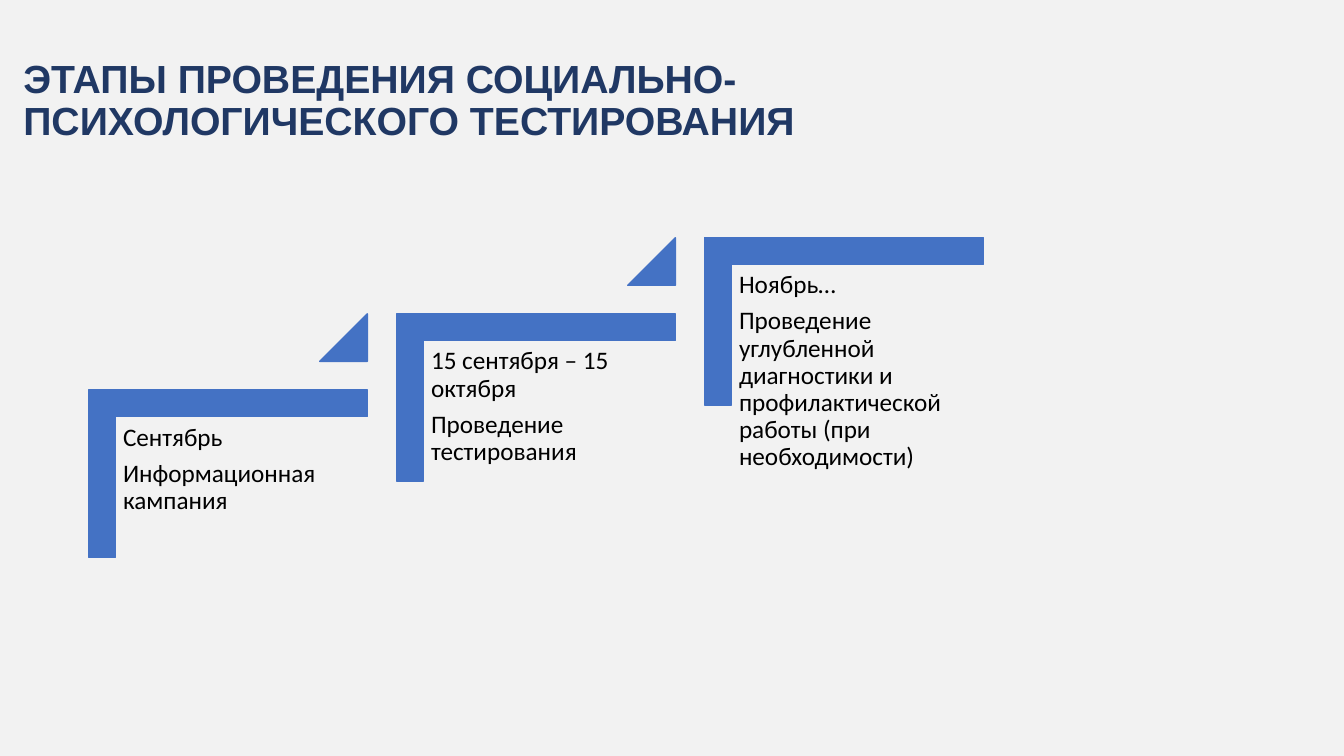
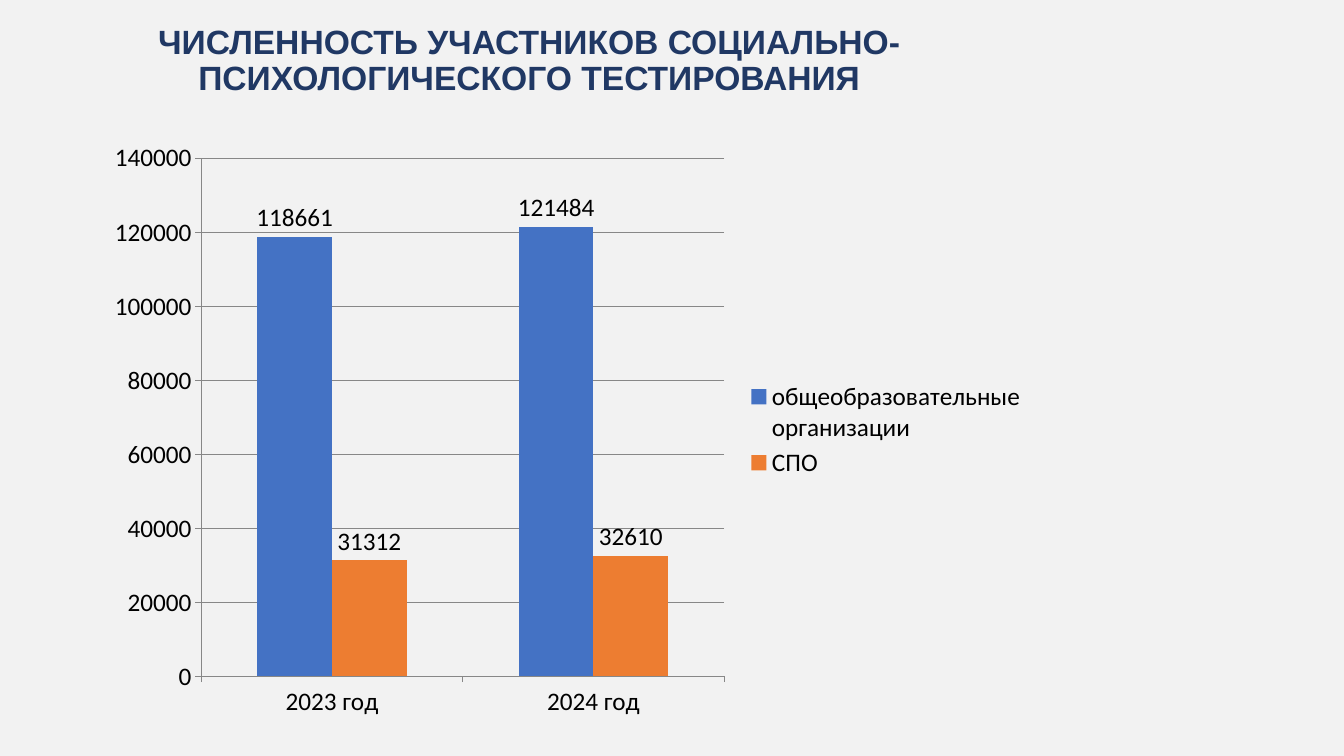
from pptx import Presentation
from pptx.chart.data import CategoryChartData
from pptx.dml.color import RGBColor
from pptx.enum.chart import XL_CHART_TYPE, XL_LABEL_POSITION, XL_LEGEND_POSITION, XL_TICK_MARK
from pptx.enum.shapes import MSO_SHAPE as SHAPE
from pptx.enum.text import MSO_ANCHOR as ANCHOR, MSO_AUTO_SIZE, PP_ALIGN as ALIGN
from pptx.util import Pt


def rgb(value):
    return RGBColor.from_string(value)


class Deck:
    """Shared style and the current slide; lengths are in points."""
    BACK, NAVY, BLUE, ORANGE = "F2F2F2", "203864", "4472C4", "ED7D31"
    BLACK, GRID = "000000", "878787"
    HEAD_FONT, BODY_FONT, BODY_SIZE = "Arial", "Calibri", 18

    def __init__(self):
        self.prs = Presentation()
        self.prs.slide_width, self.prs.slide_height = Pt(960), Pt(540)
        self.slide = None

    def font(self, font, name, size, color, bold=False):
        font.name, font.size, font.bold = name, Pt(size), bold
        font.color.rgb = rgb(color)

    # Slide with background and title
    def new_slide(self, title, box, size, align, anchor):
        self.slide = self.prs.slides.add_slide(self.prs.slide_layouts[5])
        fill = self.slide.background.fill
        fill.solid()
        fill.fore_color.rgb = rgb(self.BACK)
        sp = self.slide.shapes.title
        sp.left, sp.top, sp.width, sp.height = map(Pt, box)
        tf = sp.text_frame
        tf.text = title
        tf.word_wrap, tf.auto_size = True, MSO_AUTO_SIZE.NONE
        tf.vertical_anchor = anchor
        p = tf.paragraphs[0]
        p.alignment, p.line_spacing = align, 0.9
        self.font(p.runs[0].font, self.HEAD_FONT, size, self.NAVY, True)

    # Blue preset shape
    def shape(self, kind, x, y, w, h, adjustments, rotation=0):
        sp = self.slide.shapes.add_shape(kind, Pt(x), Pt(y), Pt(w), Pt(h))
        sp.rotation = rotation
        sp.shadow.inherit = False
        for i, value in enumerate(adjustments):
            sp.adjustments[i] = value
        sp.fill.solid()
        sp.fill.fore_color.rgb = sp.line.color.rgb = rgb(self.BLUE)
        sp.line.width = Pt(1)

    # Bracket along the top and left sides of a w by h area
    def bracket(self, x, y, w, h):
        shift = (w - h) / 2
        self.shape(SHAPE.CORNER, x + shift, y - shift, h, w, (0.16, 0.16), 90)

    # Text box with one paragraph per line
    def text(self, x, y, w, h, lines):
        tf = self.slide.shapes.add_textbox(Pt(x), Pt(y), Pt(w), Pt(h)).text_frame
        tf.word_wrap = True
        tf.margin_left = tf.margin_right = tf.margin_top = tf.margin_bottom = Pt(5)
        tf.text = "\n".join(lines)
        for p in tf.paragraphs:
            p.line_spacing, p.space_after = 0.9, Pt(6.3)
            self.font(p.runs[0].font, self.BODY_FONT, self.BODY_SIZE, self.BLACK)

    # Clustered columns with value labels
    def columns(self, x, y, w, h, categories, series, top, unit):
        data = CategoryChartData()
        data.categories = categories
        for name, values, _ in series:
            data.add_series(name, values)
        chart = self.slide.shapes.add_chart(
            XL_CHART_TYPE.COLUMN_CLUSTERED, Pt(x), Pt(y), Pt(w), Pt(h), data).chart
        chart.has_title = False
        self.font(chart.font, self.BODY_FONT, self.BODY_SIZE, self.BLACK)
        chart.has_legend = True
        chart.legend.position = XL_LEGEND_POSITION.RIGHT
        chart.legend.include_in_layout = False

        axis = chart.value_axis
        axis.minimum_scale, axis.maximum_scale, axis.major_unit = 0, top, unit
        axis.has_major_gridlines = True
        lines = [axis.major_gridlines.format.line]
        for ax in (axis, chart.category_axis):
            ax.major_tick_mark = XL_TICK_MARK.OUTSIDE
            lines.append(ax.format.line)
        for line in lines:
            line.color.rgb, line.width = rgb(self.GRID), Pt(0.75)

        plot = chart.plots[0]
        plot.gap_width, plot.overlap, plot.vary_by_categories = 150, 0, False
        plot.has_data_labels = True
        plot.data_labels.show_value = True
        plot.data_labels.position = XL_LABEL_POSITION.OUTSIDE_END
        for bars, (_, _, color) in zip(plot.series, series):
            bars.format.fill.solid()
            bars.format.fill.fore_color.rgb = rgb(color)


def stages(deck):
    deck.new_slide("ЭТАПЫ ПРОВЕДЕНИЯ СОЦИАЛЬНО-ПСИХОЛОГИЧЕСКОГО ТЕСТИРОВАНИЯ",
                   (9.5, 9.5, 744.5, 126), 28, ALIGN.LEFT, ANCHOR.MIDDLE)
    steps = [
        ("Сентябрь", "Информационная кампания"),
        ("15 сентября – 15 октября", "Проведение тестирования"),
        ("Ноябрь…", "Проведение углубленной диагностики и профилактической "
                    "работы (при необходимости)"),
    ]
    # Each step stands to the right of and above the one before
    width, height, rise, pitch, arrow = 199, 119.5, 54.4, 220, 34
    for i, lines in enumerate(steps):
        x, y = 63.4 + i * pitch, 278.6 - i * rise
        deck.bracket(x, y, width, height)
        deck.text(x + 19.5, y + 19.5, 180, 157.5, lines)
        if i < len(steps) - 1:
            deck.shape(SHAPE.ISOSCELES_TRIANGLE, x + width - arrow, y - rise,
                       arrow, arrow, (1,))


def participants(deck):
    deck.new_slide("ЧИСЛЕННОСТЬ УЧАСТНИКОВ СОЦИАЛЬНО-ПСИХОЛОГИЧЕСКОГО ТЕСТИРОВАНИЯ",
                   (16.5, 14.5, 723, 64), 24, ALIGN.CENTER, ANCHOR.TOP)
    series = [
        ("общеобразовательные организации", (118661, 121484), deck.BLUE),
        ("СПО", (31312, 32610), deck.ORANGE),
    ]
    deck.columns(68.5, 93.5, 672, 427, ("2023 год", "2024 год"), series, 140000, 20000)


def main():
    deck = Deck()
    stages(deck)
    participants(deck)
    deck.prs.save("out.pptx")


if __name__ == "__main__":
    main()
